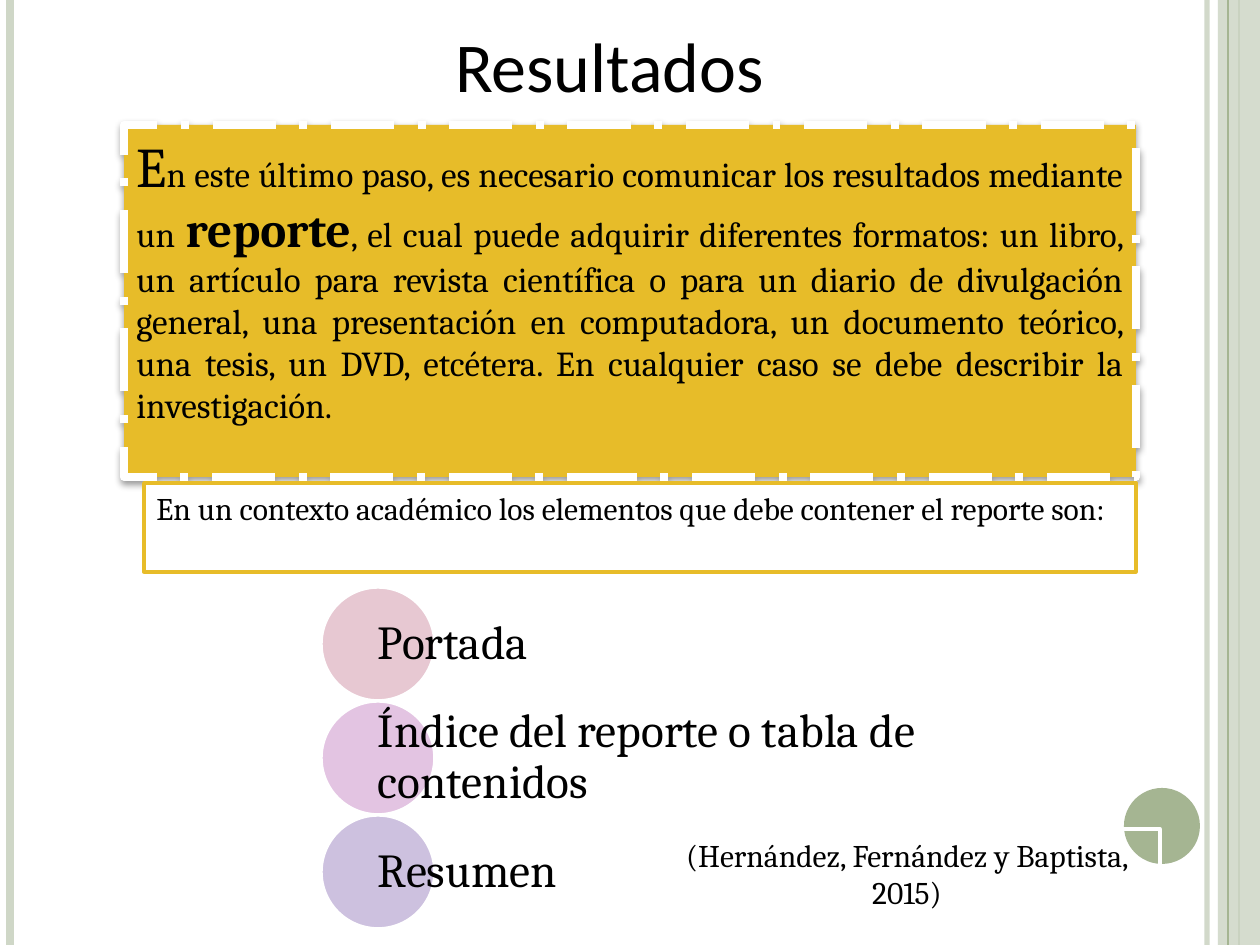
import pptx
import pptx.util
import pptx.dml.color
import pptx.enum.dml
import pptx.enum.shapes
import pptx.enum.text
import pptx.oxml
import pptx.oxml.ns

RGBColor = pptx.dml.color.RGBColor
Pt = pptx.util.Pt
ALIGN = pptx.enum.text.PP_ALIGN
ANCHOR = pptx.enum.text.MSO_ANCHOR
SHAPE = pptx.enum.shapes.MSO_SHAPE
EMU_PER_PX = 914400 / 126

BLACK = RGBColor(0x00, 0x00, 0x00)
WHITE = RGBColor(0xFF, 0xFF, 0xFF)
SAGE = RGBColor(0xA5, 0xB5, 0x92)
PALE_SAGE = RGBColor(0xCF, 0xD7, 0xC7)
GOLD = RGBColor(0xE7, 0xBC, 0x29)
ROSE = RGBColor(0xD0, 0x92, 0xA7)
ORCHID = RGBColor(0xC8, 0x8B, 0xC7)
VIOLET = RGBColor(0x9C, 0x85, 0xC0)

PAGE_WIDTH, PAGE_HEIGHT = 1260, 945
CIRCLE_SIZE, CIRCLE_LEFT, CIRCLE_TOP, CIRCLE_STEP = 114, 321, 587, 114
LABEL_WIDTH = 607

REPORT_RUNS = [
    ("E", 32, False),
    ("n este último paso, es necesario comunicar los resultados mediante un ", 20, False),
    ("reporte", 28, True),
    (", el cual puede adquirir diferentes formatos: un libro, un artículo para revista "
     "científica o para un diario de divulgación general, una presentación en computadora, "
     "un documento teórico, una tesis, un DVD, etcétera. En cualquier caso se debe describir "
     "la investigación.", 20, False),
]
REPORT_PARTS = [("Portada", ROSE), ("Índice del reporte o tabla de contenidos", ORCHID),
                ("Resumen", VIOLET)]


def px(length):
    return pptx.util.Emu(round(length * EMU_PER_PX))


def bounds(*lengths):
    return [px(length) for length in lengths]


def set_opacity(owner, percent):
    color = owner.find(".//" + pptx.oxml.ns.qn("a:srgbClr"))
    color.append(pptx.oxml.parse_xml(
        f'<a:alpha {pptx.oxml.ns.nsdecls("a")} val="{percent * 1000}"/>'))


def add_rule(page, x, color, width, opacity=100):
    rule = page.shapes.add_connector(
        pptx.enum.shapes.MSO_CONNECTOR.STRAIGHT, *bounds(x, 0, x, PAGE_HEIGHT))
    rule.line.color.rgb = color
    rule.line.width = Pt(width)
    properties = rule._element.spPr
    if opacity < 100:
        set_opacity(properties, opacity)
    properties.append(pptx.oxml.parse_xml(f'<a:effectLst {pptx.oxml.ns.nsdecls("a")}/>'))


def add_figure(shapes, kind, place, fill=None, line=None, width=2, opacity=100):
    figure = shapes.add_shape(kind, *bounds(*place))
    figure.shadow.inherit = False
    if fill is None:
        figure.fill.background()
    else:
        figure.fill.solid()
        figure.fill.fore_color.rgb = fill
        if opacity < 100:
            set_opacity(figure._element.spPr, opacity)
    if line is None:
        figure.line.fill.background()
    else:
        figure.line.color.rgb = line
        figure.line.width = Pt(width)
    return figure


def format_span(span, size, font="Cambria", bold=False):
    span.font.size = Pt(size)
    span.font.name = font
    span.font.bold = bold
    span.font.color.rgb = BLACK


def write_text(box, text, size, align=ALIGN.LEFT, anchor=ANCHOR.MIDDLE, font="Cambria"):
    frame = box.text_frame
    frame.text = text
    frame.word_wrap = True
    frame.vertical_anchor = anchor
    para = frame.paragraphs[0]
    para.alignment = align
    format_span(para.runs[0], size, font)


def add_drop_shadow(box):
    effects = box._element.spPr.find(pptx.oxml.ns.qn("a:effectLst"))
    effects.append(pptx.oxml.parse_xml(
        f'<a:outerShdw {pptx.oxml.ns.nsdecls("a")} blurRad="{Pt(4)}" dist="{Pt(2)}" '
        'dir="5400000" rotWithShape="0"><a:srgbClr val="000000">'
        '<a:alpha val="40000"/></a:srgbClr></a:outerShdw>'))


def add_side_decoration(page):
    add_rule(page, 1207, PALE_SAGE, 3, 93)
    add_rule(page, 10, PALE_SAGE, 4.5)
    add_rule(page, 1239, SAGE, 1.5)
    add_figure(page.shapes, SHAPE.RECTANGLE, (1218, 0, PAGE_WIDTH - 1218, PAGE_HEIGHT),
               PALE_SAGE, opacity=87)
    add_rule(page, 1228, SAGE, 0.75)
    add_figure(page.shapes, SHAPE.OVAL, (1124, 788, 76, 76), SAGE)


def add_title(page):
    title = page.shapes.title
    title.left, title.top, title.width, title.height = bounds(123, -4, 973, 137)
    write_text(title, "Resultados", 40, ALIGN.CENTER, font="Calibri")


def add_report_box(page):
    box = add_figure(page.shapes, SHAPE.RECTANGLE, (124, 125, 1012, 352), GOLD, WHITE, 4.5)
    box.line.dash_style = pptx.enum.dml.MSO_LINE.LONG_DASH_DOT
    add_drop_shadow(box)
    box.text_frame.word_wrap = True
    box.text_frame.vertical_anchor = ANCHOR.TOP
    para = box.text_frame.paragraphs[0]
    para.alignment = ALIGN.JUSTIFY
    for text, size, bold in REPORT_RUNS:
        span = para.add_run()
        span.text = text
        format_span(span, size, bold=bold)


def add_report_parts(page):
    group = page.shapes.add_group_shape()
    for index, (text, color) in enumerate(REPORT_PARTS):
        top = CIRCLE_TOP + index * CIRCLE_STEP
        add_figure(group.shapes, SHAPE.OVAL, (CIRCLE_LEFT, top, CIRCLE_SIZE, CIRCLE_SIZE),
                   color, WHITE, opacity=50)
        label = group.shapes.add_textbox(
            *bounds(CIRCLE_LEFT + CIRCLE_SIZE // 2, top, LABEL_WIDTH, CIRCLE_SIZE))
        write_text(label, text, 27)
        frame = label.text_frame
        frame.margin_left = frame.margin_right = 0
        frame.margin_top = frame.margin_bottom = px(5)
        frame.paragraphs[0].line_spacing = 0.9


def main():
    deck = pptx.Presentation()
    deck.slide_width, deck.slide_height = bounds(PAGE_WIDTH, PAGE_HEIGHT)
    page = deck.slides.add_slide(deck.slide_layouts.get_by_name("Title Only"))
    page.background.fill.solid()
    page.background.fill.fore_color.rgb = WHITE
    add_side_decoration(page)
    add_title(page)
    add_report_box(page)
    context = add_figure(page.shapes, SHAPE.RECTANGLE, (144, 483, 992, 89), WHITE, GOLD)
    write_text(context, "En un contexto académico los elementos que debe contener el reporte son:",
               18, anchor=ANCHOR.TOP)
    add_report_parts(page)
    citation = add_figure(page.shapes, SHAPE.RECTANGLE, (654, 829, 506, 89), line=WHITE)
    write_text(citation, "(Hernández, Fernández y Baptista, 2015)", 18, ALIGN.CENTER)
    deck.save("out.pptx")


if __name__ == "__main__":
    main()
